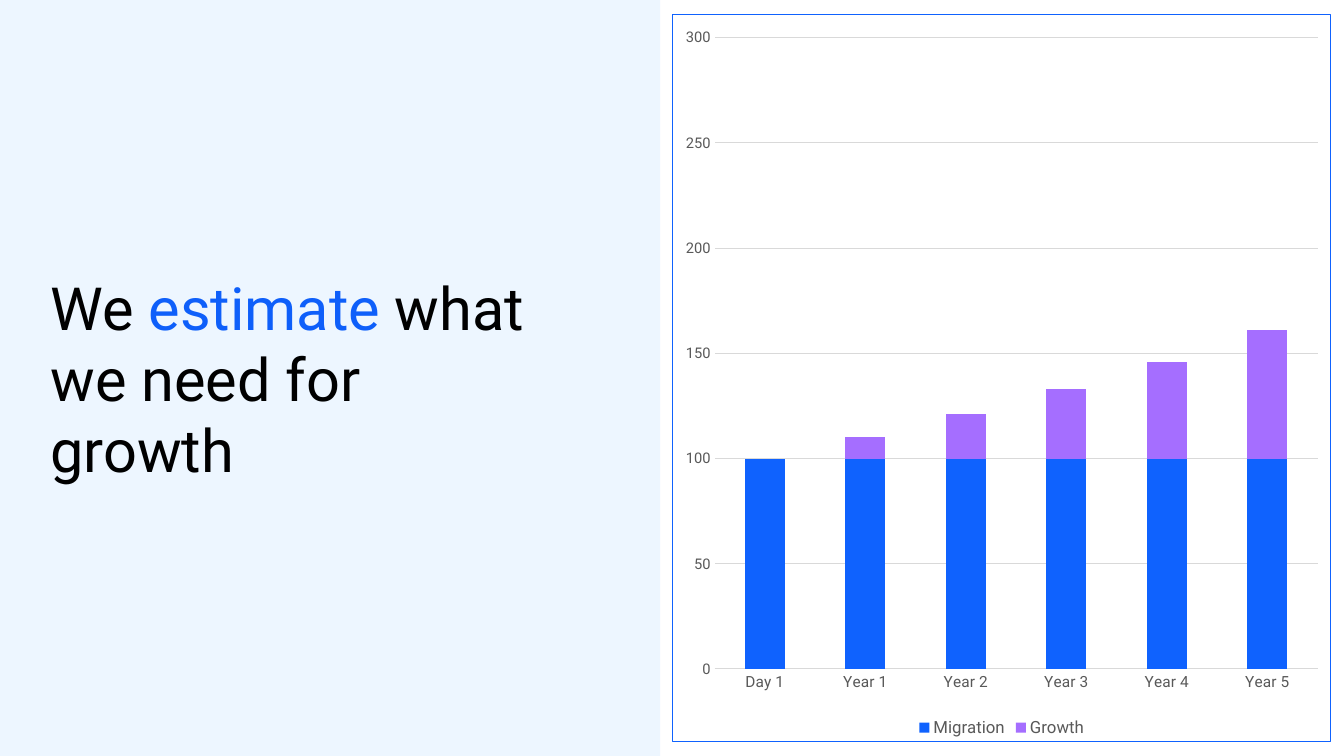
from pptx import Presentation
from pptx.chart.data import CategoryChartData
from pptx.dml.color import RGBColor
from pptx.enum.chart import XL_CHART_TYPE as ChartType
from pptx.enum.chart import XL_LEGEND_POSITION as LegendPosition
from pptx.enum.chart import XL_TICK_MARK as TickMark
from pptx.enum.shapes import MSO_SHAPE as Shape
from pptx.enum.text import MSO_ANCHOR as Anchor
from pptx.enum.text import MSO_AUTO_SIZE as AutoSize
from pptx.enum.text import PP_ALIGN as Align
from pptx.oxml import parse_xml
from pptx.oxml.ns import nsdecls
from pptx.util import Cm, Pt

FONT = "Roboto"
BLUE, PURPLE, GREY, GRID = "0F62FE", "A56EFF", "595959", "D9D9D9"


def color(hex_string):
    return RGBColor.from_string(hex_string)


def style_font(font, size, hex_string):
    font.name = FONT
    font.size = Pt(size)
    font.bold = False
    font.color.rgb = color(hex_string)


presentation = Presentation()
presentation.slide_width = Cm(33.87)
presentation.slide_height = Cm(19.05)
slide = presentation.slides.add_slide(presentation.slide_layouts[5])

# Pale panel, sent behind the title
panel = slide.shapes.add_shape(Shape.RECTANGLE, 0, 0, Cm(16.64), Cm(19.05))
panel.shadow.inherit = False
panel.fill.solid()
panel.fill.fore_color.rgb = color("EDF6FF")
panel.line.fill.background()
slide.shapes.element.insert(2, panel.element)

# Title with one highlighted word
title = slide.shapes.title
title.left, title.top, title.width, title.height = Cm(1.14), Cm(5.61), Cm(12.95), Cm(7.82)
frame = title.text_frame
frame.word_wrap = True
frame.auto_size = AutoSize.NONE
frame.vertical_anchor = Anchor.MIDDLE
frame.margin_left = frame.margin_right = frame.margin_top = frame.margin_bottom = Cm(0.13)
paragraph = frame.paragraphs[0]
paragraph.alignment = Align.LEFT
for text, hex_string in [("We ", "000000"), ("estimate ", "0E5FFA"),
                         ("what we need for growth", "000000")]:
    run = paragraph.add_run()
    run.text = text
    style_font(run.font, 42.5, hex_string)

# Stacked growth chart
data = CategoryChartData(number_format="0")
data.categories = ["Day 1"] + [f"Year {year}" for year in range(1, 6)]
data.add_series("Migration", [100] * 6)
data.add_series("Growth", [None, 10, 21, 33, 46, 61])
chart = slide.shapes.add_chart(ChartType.COLUMN_STACKED, Cm(16.94), Cm(0.36),
                               Cm(16.61), Cm(18.34), data).chart
chart.has_title = False
style_font(chart.font, 10, "000000")
plot = chart.plots[0]
plot.gap_width = 150
plot.overlap = 100
plot.vary_by_categories = False
for series, hex_string in zip(plot.series, [BLUE, PURPLE]):
    series.format.fill.solid()
    series.format.fill.fore_color.rgb = color(hex_string)

# Axes and gridlines
value_axis, category_axis = chart.value_axis, chart.category_axis
for axis, size in [(category_axis, 11), (value_axis, 10.5)]:
    axis.major_tick_mark = axis.minor_tick_mark = TickMark.NONE
    style_font(axis.tick_labels.font, size, GREY)
value_axis.minimum_scale = 0
value_axis.maximum_scale = 300
value_axis.major_unit = 50
value_axis.format.line.fill.background()
value_axis.has_major_gridlines = True
for line in (category_axis.format.line, value_axis.major_gridlines.format.line):
    line.color.rgb = color(GRID)
    line.width = Pt(0.75)

# Legend
chart.has_legend = True
chart.legend.position = LegendPosition.BOTTOM
chart.legend.include_in_layout = False
style_font(chart.legend.font, 12, GREY)

# White chart area with a blue border
chart.element.chart.addnext(parse_xml(
    f'<c:spPr {nsdecls("c", "a")}>'
    '<a:solidFill><a:srgbClr val="FFFFFF"/></a:solidFill>'
    f'<a:ln w="{Pt(0.75)}"><a:solidFill><a:srgbClr val="{BLUE}"/></a:solidFill></a:ln>'
    '</c:spPr>'))

presentation.save("out.pptx")
